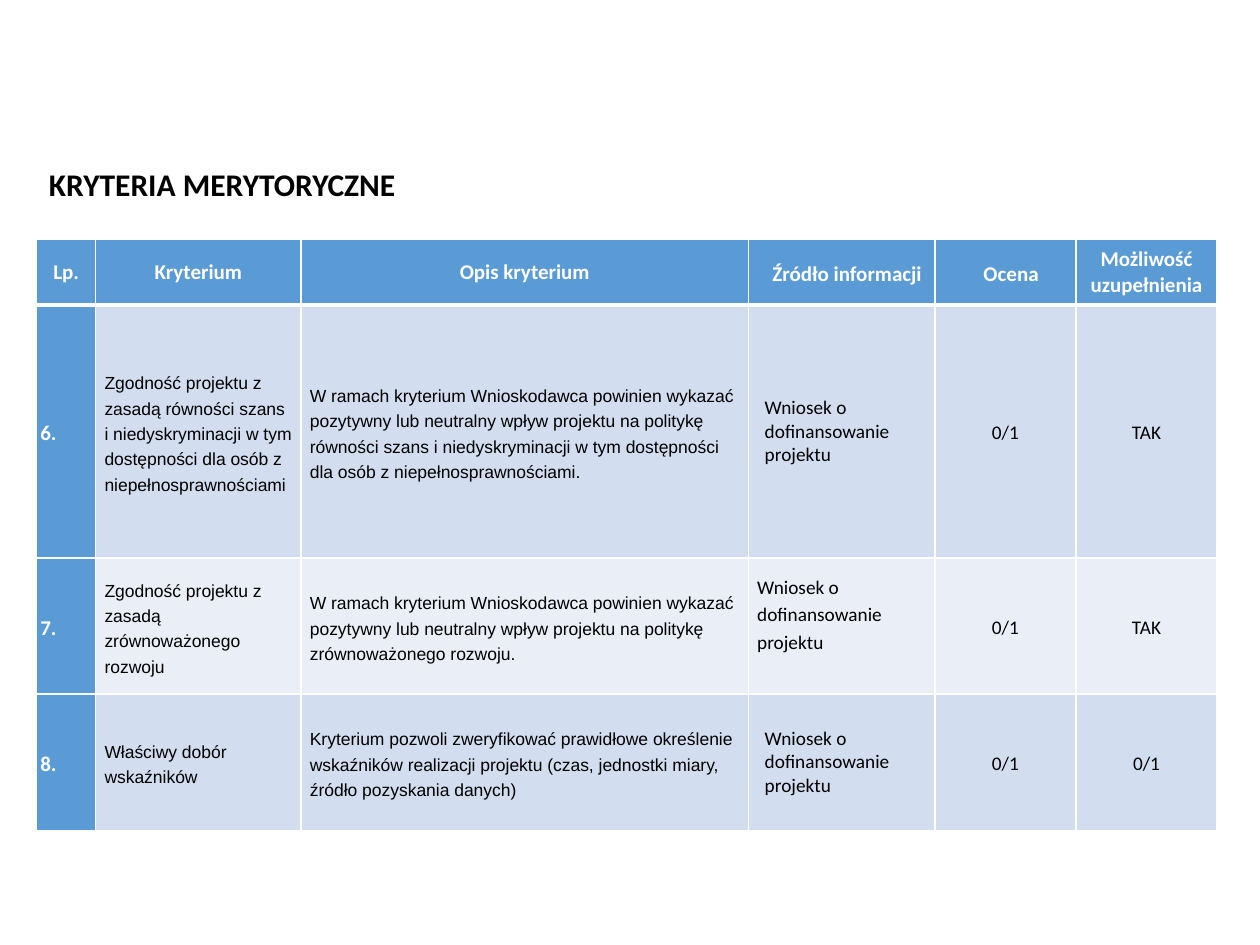
from dataclasses import dataclass

from lxml.etree import SubElement
from pptx import Presentation
from pptx.dml.color import RGBColor
from pptx.enum.text import MSO_ANCHOR, PP_ALIGN
from pptx.oxml.ns import qn
from pptx.util import Inches, Pt


@dataclass(frozen=True)
class Theme:
    white: str = "FFFFFF"
    black: str = "000000"
    blue: str = "5B9BD5"
    bands: tuple = ("D2DEEF", "EAEFF7")
    sans: str = "Calibri"
    plain: str = "Arial"
    title: int = 18
    head: int = 12
    body: int = 11
    small: int = 10
    rule: int = 1
    thick: int = 3


@dataclass(frozen=True)
class Head:
    text: str
    width: float
    style: dict


@dataclass(frozen=True)
class Item:
    label: str
    name: str
    about: str
    extra: str
    height: float
    source: dict


THEME = Theme()
WIDE = (0.1, 0.05, 0.1, 0.05)
SLIM = (0.07, 0, 0.07, 0)
NONE = (0, 0, 0, 0)
CENTER = dict(align=PP_ALIGN.CENTER)
INSET = dict(left=0.06)
SOURCE = "Wniosek o dofinansowanie projektu"
SCORE = "0/1"
TOP = 0.52

HEADS = [
    Head("Lp.", 0.47, CENTER),
    Head("Kryterium", 1.63, CENTER),
    Head("Opis kryterium", 3.55, CENTER),
    Head("Źródło informacji", 1.48, dict(pad=NONE, first=0.19, space=1.15)),
    Head("Ocena", 1.12, dict(CENTER, pad=NONE, left=0.09, space=1.15)),
    Head("Możliwość uzupełnienia", 1.12, CENTER),
]

ITEMS = [
    Item("6.", "Zgodność projektu z zasadą równości szans i niedyskryminacji "
         "w tym dostępności dla osób z niepełnosprawnościami",
         "W ramach kryterium Wnioskodawca powinien wykazać pozytywny lub "
         "neutralny wpływ projektu na politykę równości szans i "
         "niedyskryminacji w tym dostępności dla osób z "
         "niepełnosprawnościami.", "TAK", 2.01, INSET),
    Item("7.", "Zgodność projektu z zasadą zrównoważonego rozwoju",
         "W ramach kryterium Wnioskodawca powinien wykazać pozytywny lub "
         "neutralny wpływ projektu na politykę zrównoważonego rozwoju.",
         "TAK", 1.08, dict(space=1.15, pad=(0.07, 0, 0.07, 0.2))),
    Item("8.", "Właściwy dobór wskaźników",
         "Kryterium pozwoli zweryfikować prawidłowe określenie wskaźników "
         "realizacji projektu (czas, jednostki miary, źródło pozyskania "
         "danych)", SCORE, 1.08, INSET),
]


def write(frame, text: str, *, size: int, color: str = THEME.black,
          font: str = THEME.sans, bold: bool = False,
          align: PP_ALIGN = PP_ALIGN.LEFT, space: float = 1.0,
          left: float = 0, first: float = 0) -> None:
    para = frame.paragraphs[0]
    para.alignment = align
    para.line_spacing = space
    props = para._p.get_or_add_pPr()
    props.set("marL", str(Inches(left)))
    props.set("indent", str(Inches(first)))
    run = para.add_run()
    run.text = text
    run.font.size = Pt(size)
    run.font.name = font
    run.font.bold = bold
    run.font.color.rgb = RGBColor.from_string(color)


def edge(cell, top: int, base: int) -> None:
    props = cell._tc.get_or_add_tcPr()
    sides = dict(lnL=THEME.rule, lnR=THEME.rule, lnT=top, lnB=base)
    for spot, (tag, width) in enumerate(sides.items()):
        line = SubElement(props, qn(f"a:{tag}"), w=str(Pt(width)))
        fill = SubElement(line, qn("a:solidFill"))
        SubElement(fill, qn("a:srgbClr"), val=THEME.white)
        props.insert(spot, line)


def paint(cell, text: str, fill: str, *, pad: tuple = SLIM,
          top: int = THEME.rule, base: int = THEME.rule, **style) -> None:
    cell.fill.solid()
    cell.fill.fore_color.rgb = RGBColor.from_string(fill)
    cell.vertical_anchor = MSO_ANCHOR.MIDDLE
    (cell.margin_left, cell.margin_top,
     cell.margin_right, cell.margin_bottom) = map(Inches, pad)
    edge(cell, top, base)
    write(cell.text_frame, text, **style)


def draw_title(slide) -> None:
    box = slide.shapes.add_textbox(
        Inches(0.29), Inches(1.26), Inches(3.15), Inches(0.4))
    frame = box.text_frame
    frame.word_wrap = False
    frame.vertical_anchor = MSO_ANCHOR.MIDDLE
    write(frame, "KRYTERIA MERYTORYCZNE", size=THEME.title, bold=True)


def draw_table(slide) -> None:
    tall = [TOP] + [item.height for item in ITEMS]
    wide = [head.width for head in HEADS]
    table = slide.shapes.add_table(
        len(tall), len(wide), Inches(0.29), Inches(1.9),
        Inches(sum(wide)), Inches(sum(tall))).table
    table.first_row = table.horz_banding = False
    for row, size in zip(table.rows, tall):
        row.height = Inches(size)
    strong = dict(size=THEME.head, color=THEME.white, bold=True)
    for col, head in enumerate(HEADS):
        table.columns[col].width = Inches(head.width)
        style = dict(strong, pad=WIDE, base=THEME.thick) | head.style
        paint(table.cell(0, col), head.text, THEME.blue, **style)
    label = dict(strong, pad=(0.03, 0, 0.03, 0),
                 align=PP_ALIGN.JUSTIFY, space=1.15)
    prose = dict(size=THEME.small, font=THEME.plain, space=1.3)
    mark = dict(CENTER, size=THEME.body, space=1.15)
    for row, item in enumerate(ITEMS, 1):
        band = THEME.bands[(row - 1) % 2]
        cells = [
            (item.label, THEME.blue, label),
            (item.name, band, prose),
            (item.about, band, prose),
            (SOURCE, band, dict(item.source, size=THEME.body)),
            (SCORE, band, mark),
            (item.extra, band, mark),
        ]
        top = THEME.thick if row == 1 else THEME.rule
        for col, (text, fill, style) in enumerate(cells):
            paint(table.cell(row, col), text, fill, top=top, **style)


def main() -> None:
    deck = Presentation()
    deck.slide_width, deck.slide_height = Inches(10), Inches(7.5)
    slide = deck.slides.add_slide(deck.slide_layouts[6])
    draw_title(slide)
    draw_table(slide)
    deck.save("out.pptx")


if __name__ == "__main__":
    main()
